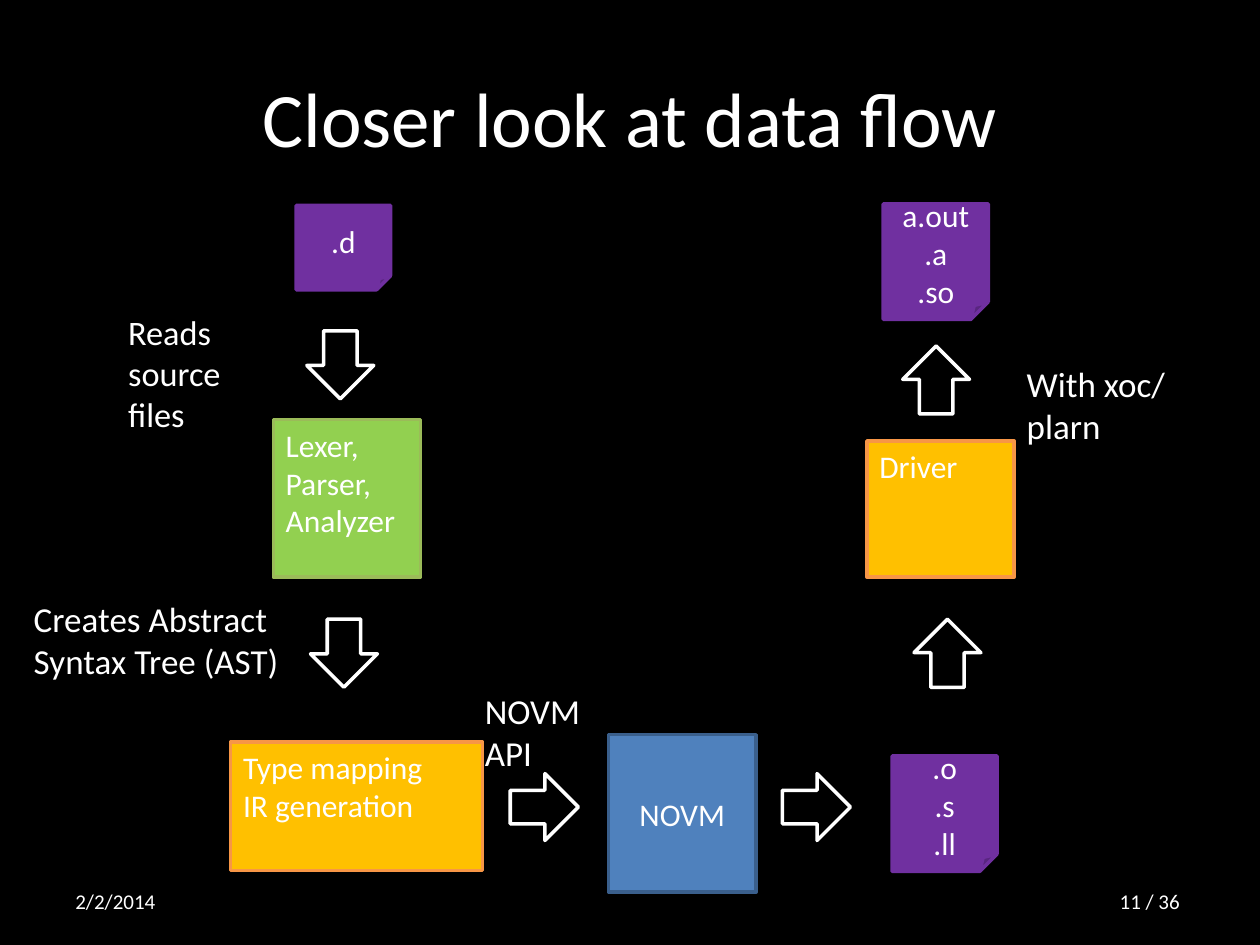
from dataclasses import dataclass

from pptx import Presentation
from pptx.dml.color import RGBColor
from pptx.enum.shapes import MSO_SHAPE
from pptx.enum.text import MSO_ANCHOR, PP_ALIGN
from pptx.util import Pt

RECT = MSO_SHAPE.RECTANGLE
FILE = MSO_SHAPE.FOLDED_CORNER
ARROW = MSO_SHAPE.RIGHT_ARROW
TOP, MIDDLE = MSO_ANCHOR.TOP, MSO_ANCHOR.MIDDLE
LEFT, CENTER, RIGHT = PP_ALIGN.LEFT, PP_ALIGN.CENTER, PP_ALIGN.RIGHT

FONT = "Calibri"
WHITE, BLACK = "FFFFFF", "000000"
PURPLE, AMBER, ORANGE = "7030A0", "FFC000", "F79646"
GREEN, OLIVE = "92D050", "9BBB59"
BLUE, NAVY = "4F81BD", "3A5F8C"
ARROW_W, ARROW_H = 38.9, 38.2
DOWN, UP, ACROSS = 90, 270, 0


@dataclass
class Node:
    text: str
    x: float
    y: float
    w: float
    h: float
    fill: str = PURPLE
    line: str = PURPLE
    kind: int = FILE
    anchor: int = MIDDLE
    align: int = CENTER


@dataclass
class Arrow:
    x: float
    y: float
    turn: int


@dataclass
class Label:
    text: str
    x: float
    y: float
    w: float
    h: float
    size: float = 20
    anchor: int = TOP
    align: int = LEFT


NODES = [
    Node(".d", 169.2, 117.4, 54, 48.2),
    Node("Lexer, Parser,\nAnalyzer", 156.2, 239.8, 84.2, 90, GREEN, OLIVE, RECT, TOP, LEFT),
    Node("Type mapping\nIR generation", 131.8, 424.1, 144, 73.4, AMBER, ORANGE, RECT, TOP, LEFT),
    Node("NOVM", 347.8, 419.8, 84.2, 90, BLUE, NAVY, RECT),
    Node(".o\n.s\n.ll", 509.8, 432, 60, 66),
    Node("Driver", 495.4, 252, 84.2, 77.8, AMBER, ORANGE, RECT, TOP, LEFT),
    Node("a.out\n.a\n.so", 504.7, 116.6, 60, 66),
]

ARROWS = [
    Arrow(175, 189.4, DOWN),
    Arrow(177.1, 354.2, DOWN),
    Arrow(291.6, 442.1, ACROSS),
    Arrow(447.1, 442.1, ACROSS),
    Arrow(522, 354.2, UP),
    Arrow(515.5, 198, UP),
]

LABELS = [
    Label("Reads\nsource\nfiles", 66.2, 174.2, 77.8, 66.2, 19.6),
    Label("Creates Abstract Syntax Tree (AST)", 12.2, 337.7, 162, 59.8),
    Label("NOVM API", 270, 390.2, 98.6, 36),
    Label("With xoc/\nplarn", 579.6, 203.8, 98.6, 59.8),
    Label("2/2/2014", 36, 500.4, 167.8, 28.8, 12, MIDDLE),
    Label("11 / 36 ", 516.2, 500.4, 167.8, 28.8, 12, MIDDLE, RIGHT),
]


def rgb(color: str) -> RGBColor:
    return RGBColor.from_string(color)


def write(tf, text: str, *, size: float = 18, anchor: int = TOP, align: int = LEFT) -> None:
    tf.word_wrap = True
    tf.vertical_anchor = anchor
    for i, line in enumerate(text.split("\n")):
        p = tf.add_paragraph() if i else tf.paragraphs[0]
        p.alignment = align
        r = p.add_run()
        r.text = line
        r.font.name = FONT
        r.font.size = Pt(size)
        r.font.color.rgb = rgb(WHITE)


def add_shape(s, kind: int, box: tuple, line: str, fill: str = ""):
    sp = s.shapes.add_shape(kind, *map(Pt, box))
    sp.shadow.inherit = False
    if fill:
        sp.fill.solid()
        sp.fill.fore_color.rgb = rgb(fill)
    else:
        sp.fill.background()
    sp.line.color.rgb = rgb(line)
    sp.line.width = Pt(2)
    return sp


def add_node(s, n: Node) -> None:
    sp = add_shape(s, n.kind, (n.x, n.y, n.w, n.h), n.line, n.fill)
    write(sp.text_frame, n.text, anchor=n.anchor, align=n.align)


def add_arrow(s, a: Arrow) -> None:
    sp = add_shape(s, ARROW, (a.x, a.y, ARROW_W, ARROW_H), WHITE)
    sp.rotation = a.turn


def add_label(s, lb: Label) -> None:
    sp = s.shapes.add_textbox(Pt(lb.x), Pt(lb.y), Pt(lb.w), Pt(lb.h))
    write(sp.text_frame, lb.text, size=lb.size, anchor=lb.anchor, align=lb.align)


def add_title(s, text: str) -> None:
    sp = s.shapes.title
    sp.left, sp.top, sp.width, sp.height = Pt(36), Pt(21.6), Pt(648), Pt(90)
    write(sp.text_frame, text, size=44, anchor=MIDDLE, align=CENTER)


def main() -> None:
    prs = Presentation()
    prs.slide_width, prs.slide_height = Pt(720), Pt(540)
    s = prs.slides.add_slide(prs.slide_layouts[5])
    s.background.fill.solid()
    s.background.fill.fore_color.rgb = rgb(BLACK)
    add_title(s, "Closer look at data flow")
    for n in NODES:
        add_node(s, n)
    for a in ARROWS:
        add_arrow(s, a)
    for lb in LABELS:
        add_label(s, lb)
    prs.save("out.pptx")


if __name__ == "__main__":
    main()
